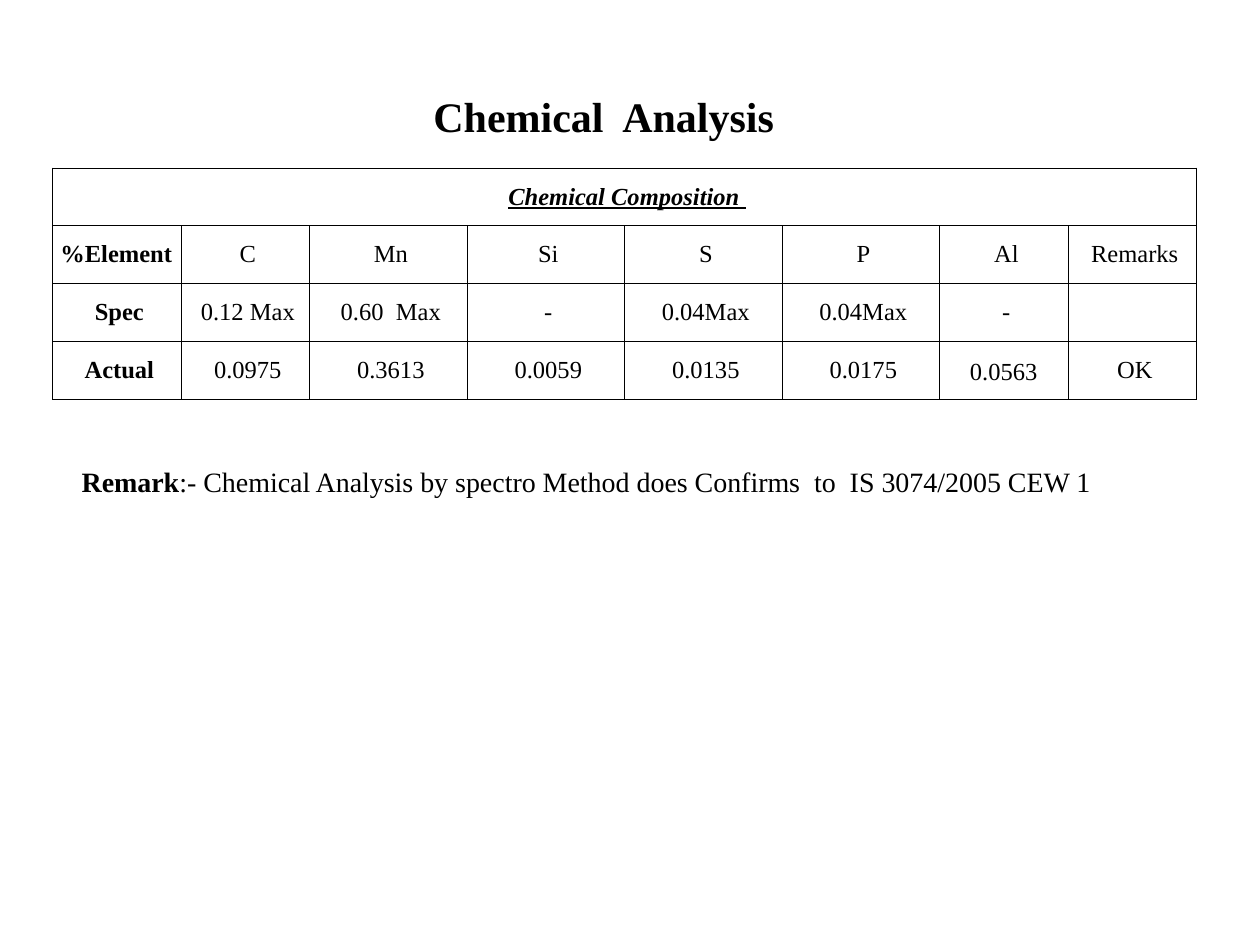
import pptx
import pptx.util
import pptx.dml.color
import pptx.enum.text
import pptx.oxml
import pptx.oxml.ns

Pt = pptx.util.Pt
PP_ALIGN = pptx.enum.text.PP_ALIGN
MSO_ANCHOR = pptx.enum.text.MSO_ANCHOR

FONT = "Times New Roman"
COLORS = {"text": "000000", "border": "000000", "cell": "FFFFFF"}

TITLE = "Chemical  Analysis"
HEADING = "Chemical Composition "
ROWS = [
    ["%Element ", "C", "Mn", "Si", "S", "P", "Al", "Remarks"],
    ["Spec", "0.12 Max", "0.60  Max", "-", "0.04Max", "0.04Max", "-", ""],
    ["Actual", "0.0975", "0.3613", "0.0059", "0.0135", "0.0175", "0.0563", "OK"],
]
REMARK = [("Remark", True),
          (":- Chemical Analysis by spectro Method does Confirms  to  IS 3074/2005 CEW 1", False)]

NARROW, WIDE = 73.44, 90
COL_WIDTHS = [NARROW] * 2 + [WIDE] * 4 + [NARROW] * 2
ROW_HEIGHT = 33
CELL_INDENT = 3


def rgb(name):
    return pptx.dml.color.RGBColor.from_string(COLORS[name])


def set_font(font, size, bold=False):
    font.name = FONT
    font.size = Pt(size)
    font.bold = bold
    font.color.rgb = rgb("text")


def add_text(slide, left, top, width, height):
    tf = slide.shapes.add_textbox(Pt(left), Pt(top), Pt(width), Pt(height)).text_frame
    tf.word_wrap = True
    return tf


def format_cell(cell):
    cell.margin_left = cell.margin_right = cell.margin_top = cell.margin_bottom = 0
    cell.vertical_anchor = MSO_ANCHOR.MIDDLE
    tcPr = cell._tc.get_or_add_tcPr()
    for side in ("lnL", "lnR", "lnT", "lnB"):
        tcPr.append(pptx.oxml.parse_xml(
            f'<a:{side} {pptx.oxml.ns.nsdecls("a")} w="{Pt(0.5)}"><a:solidFill>'
            f'<a:srgbClr val="{COLORS["border"]}"/></a:solidFill></a:{side}>'))
    cell.fill.solid()
    cell.fill.fore_color.rgb = rgb("cell")


def write_cell(cell, text, bold):
    p = cell.text_frame.paragraphs[0]
    p.text = text
    p.alignment = PP_ALIGN.CENTER
    if text == "0.0563":
        p.line_spacing = 1.15
        p.space_after = Pt(10)
    else:
        p._p.get_or_add_pPr().set("marL", str(Pt(CELL_INDENT)))
    set_font(p.font, 14, bold)
    return p


def add_composition(slide):
    n_rows, n_cols = len(ROWS) + 1, len(COL_WIDTHS)
    table = slide.shapes.add_table(n_rows, n_cols, Pt(30), Pt(96), Pt(sum(COL_WIDTHS)),
                                   Pt(n_rows * ROW_HEIGHT)).table
    table.first_row = table.horz_banding = False
    for col, width in zip(table.columns, COL_WIDTHS):
        col.width = Pt(width)
    for row in table.rows:
        row.height = Pt(ROW_HEIGHT)
    for cell in table.iter_cells():
        format_cell(cell)
    table.cell(0, 0).merge(table.cell(0, n_cols - 1))
    p = write_cell(table.cell(0, 0), HEADING, True)
    p.font.italic = p.font.underline = True
    for r, texts in enumerate(ROWS, 1):
        for c, text in enumerate(texts):
            write_cell(table.cell(r, c), text, c == 0)


def main():
    prs = pptx.Presentation()
    prs.slide_width, prs.slide_height = Pt(720), Pt(540)
    s = prs.slides.add_slide(prs.slide_layouts[6])

    tf = add_text(s, 84, 42, 522, 48)
    tf.vertical_anchor = MSO_ANCHOR.MIDDLE
    p = tf.paragraphs[0]
    p.text = TITLE
    p.alignment = PP_ALIGN.CENTER
    set_font(p.font, 24, True)

    add_composition(s)

    tf = add_text(s, 39.6, 262, 612, 26.64)
    tf.auto_size = pptx.enum.text.MSO_AUTO_SIZE.SHAPE_TO_FIT_TEXT
    for text, bold in REMARK:
        r = tf.paragraphs[0].add_run()
        r.text = text
        set_font(r.font, 16, bold)

    prs.save("out.pptx")


if __name__ == "__main__":
    main()
